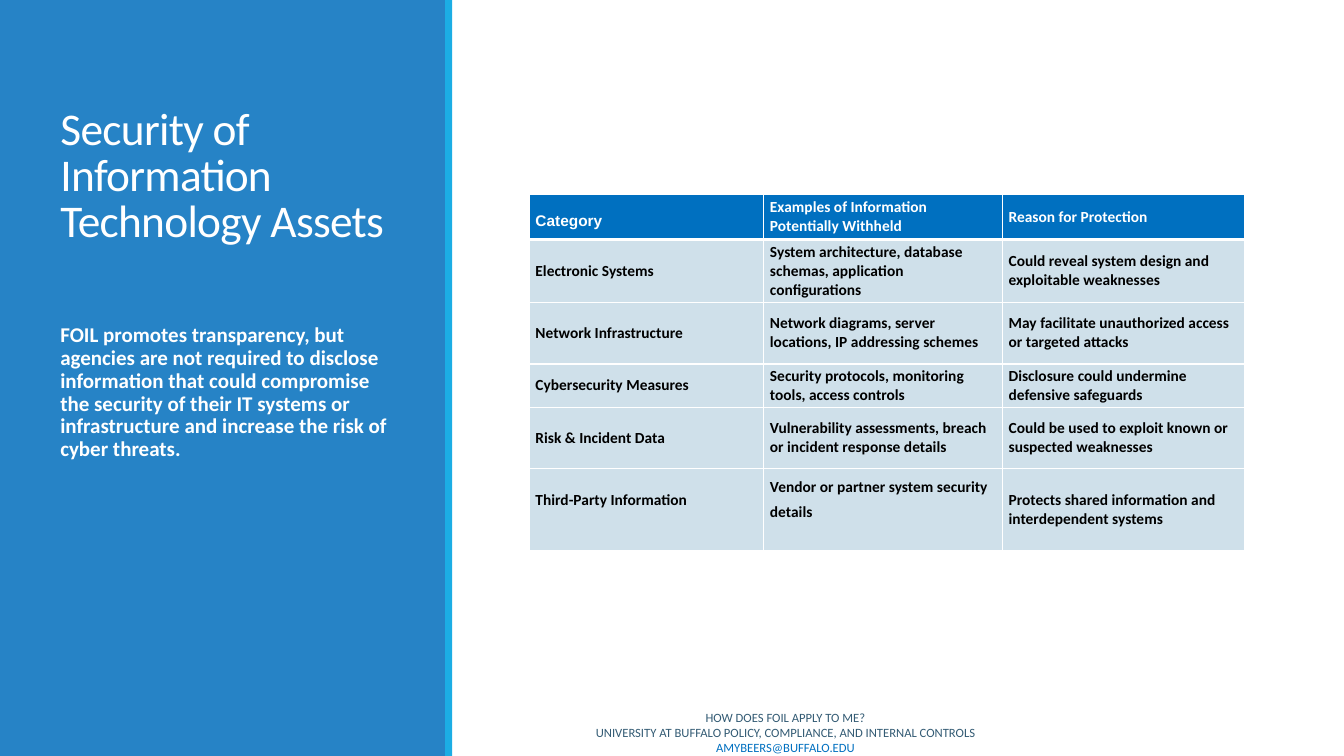
import pptx
import pptx.dml.color
import pptx.enum.shapes
import pptx.enum.text
import pptx.oxml.ns
import pptx.util
from lxml import etree

Pt = pptx.util.Pt
RGBColor = pptx.dml.color.RGBColor
Align = pptx.enum.text.PP_ALIGN
Anchor = pptx.enum.text.MSO_ANCHOR
qn = pptx.oxml.ns.qn

WHITE = RGBColor(0xFF, 0xFF, 0xFF)
BLACK = RGBColor(0x00, 0x00, 0x00)
PANEL_BLUE = RGBColor(0x26, 0x83, 0xC6)
STRIPE_CYAN = RGBColor(0x1C, 0xAD, 0xE4)
HEADER_BLUE = RGBColor(0x00, 0x70, 0xC0)
ROW_BLUE = RGBColor(0xCF, 0xE0, 0xEA)
FOOTER_SLATE = RGBColor(0x33, 0x5B, 0x74)


def write(paragraph, text, *, size, color, font="Calibri", bold=False,
          align=Align.LEFT, line=None, tracking=None):
    paragraph.alignment = align
    if line is not None:
        paragraph.line_spacing = line
    run = paragraph.add_run()
    run.text = text
    run.font.name = font
    run.font.size = Pt(size)
    run.font.bold = bold
    run.font.color.rgb = color
    if tracking is not None:
        run.font._element.set("spc", str(int(tracking * 100)))


class SlideBuilder:
    def __init__(self, slide):
        self.slide = slide
        self.grid_color = WHITE
        self.cell_size = 11

    def panel(self, left, width, color):
        bar = self.slide.shapes.add_shape(
            pptx.enum.shapes.MSO_SHAPE.RECTANGLE, Pt(left), Pt(0), Pt(width), Pt(540))
        bar.shadow.inherit = False
        bar.fill.solid()
        bar.fill.fore_color.rgb = color
        bar.line.fill.background()

    def title(self, text, left, top, width, height):
        heading = self.slide.shapes.title
        heading._element.getparent().append(heading._element)
        heading.left, heading.top = Pt(left), Pt(top)
        heading.width, heading.height = Pt(width), Pt(height)
        frame = heading.text_frame
        frame.auto_size = pptx.enum.text.MSO_AUTO_SIZE.NONE
        frame.word_wrap = True
        frame.vertical_anchor = Anchor.BOTTOM
        write(frame.paragraphs[0], text, size=32.4, color=WHITE, line=0.85, tracking=-0.5)

    def text_box(self, left, top, width, height, anchor=Anchor.TOP, inset_top=3.6):
        frame = self.slide.shapes.add_textbox(
            Pt(left), Pt(top), Pt(width), Pt(height)).text_frame
        frame.word_wrap = True
        frame.vertical_anchor = anchor
        frame.margin_top = Pt(inset_top)
        return frame

    def border(self, cell, side, width):
        edge = etree.SubElement(cell._tc.get_or_add_tcPr(), qn(f"a:ln{side}"),
                                w=str(int(Pt(width))))
        fill = etree.SubElement(edge, qn("a:solidFill"))
        etree.SubElement(fill, qn("a:srgbClr"), val=str(self.grid_color))

    def table(self, left, top, widths, heights, rows, exact_lines, extra_bottom):
        grid = self.slide.shapes.add_table(
            len(rows), len(widths), Pt(left), Pt(top),
            Pt(sum(widths)), Pt(sum(heights))).table
        for column, width in zip(grid.columns, widths):
            column.width = Pt(width)
        for r, (row, height) in enumerate(zip(rows, heights)):
            grid.rows[r].height = Pt(height)
            for c, text in enumerate(row):
                cell = grid.cell(r, c)
                cell.vertical_anchor = Anchor.MIDDLE
                cell.margin_left = cell.margin_right = Pt(4.5)
                cell.margin_top = Pt(2)
                cell.margin_bottom = Pt(2 + extra_bottom.get((r, c), 0))
                for side in "LRTB":
                    under_header = (r, side) in ((0, "B"), (1, "T"))
                    self.border(cell, side, 2.7 if under_header else 0.9)
                cell.fill.solid()
                cell.fill.fore_color.rgb = ROW_BLUE if r else HEADER_BLUE
                write(cell.text_frame.paragraphs[0], text, size=self.cell_size, bold=True,
                      color=BLACK if r else WHITE,
                      font="Calibri" if r or c else "Arial",
                      line=Pt(18) if (r, c) in exact_lines else None)


PROTECTED_ASSETS = [
    ("Category", "Examples of Information Potentially Withheld", "Reason for Protection"),
    ("Electronic Systems",
     "System architecture, database schemas, application configurations",
     "Could reveal system design and exploitable weaknesses"),
    ("Network Infrastructure",
     "Network diagrams, server locations, IP addressing schemes",
     "May facilitate unauthorized access or targeted attacks"),
    ("Cybersecurity Measures",
     "Security protocols, monitoring tools, access controls",
     "Disclosure could undermine defensive safeguards"),
    ("Risk & Incident Data",
     "Vulnerability assessments, breach or incident response details",
     "Could be used to exploit known or suspected weaknesses"),
    ("Third-Party Information",
     "Vendor or partner system security details",
     "Protects shared information and interdependent systems"),
]


def main():
    deck = pptx.Presentation()
    deck.slide_width, deck.slide_height = Pt(960), Pt(540)
    builder = SlideBuilder(deck.slides.add_slide(deck.slide_layouts[5]))

    builder.panel(0, 319, PANEL_BLUE)
    builder.panel(318, 5, STRIPE_CYAN)
    builder.title("Security of Information Technology Assets", 36, 43, 252, 137)

    summary = builder.text_box(36, 197, 252, 299, inset_top=35)
    write(summary.paragraphs[0],
          "FOIL promotes transparency, but agencies are not required to disclose "
          "information that could compromise the security of their IT systems or "
          "infrastructure and increase the risk of cyber threats.",
          size=15, color=WHITE, bold=True, line=0.9)

    footer = builder.text_box(378, 508.5, 366, 29, anchor=Anchor.MIDDLE)
    small = dict(size=9, align=Align.CENTER)
    write(footer.paragraphs[0], "HOW DOES FOIL APPLY TO ME?", color=FOOTER_SLATE, **small)
    contact = footer.add_paragraph()
    write(contact, "UNIVERSITY AT BUFFALO POLICY, COMPLIANCE, AND INTERNAL CONTROLS ",
          color=FOOTER_SLATE, **small)
    write(contact, "AMYBEERS@BUFFALO.EDU", color=HEADER_BLUE, **small)

    builder.table(378, 139, [167.5, 170.5, 173], [32, 45, 44, 31, 44, 58],
                  PROTECTED_ASSETS, exact_lines={(0, 0), (5, 1)},
                  extra_bottom={(5, 0): 13, (5, 1): 18})
    deck.save("out.pptx")


if __name__ == "__main__":
    main()
